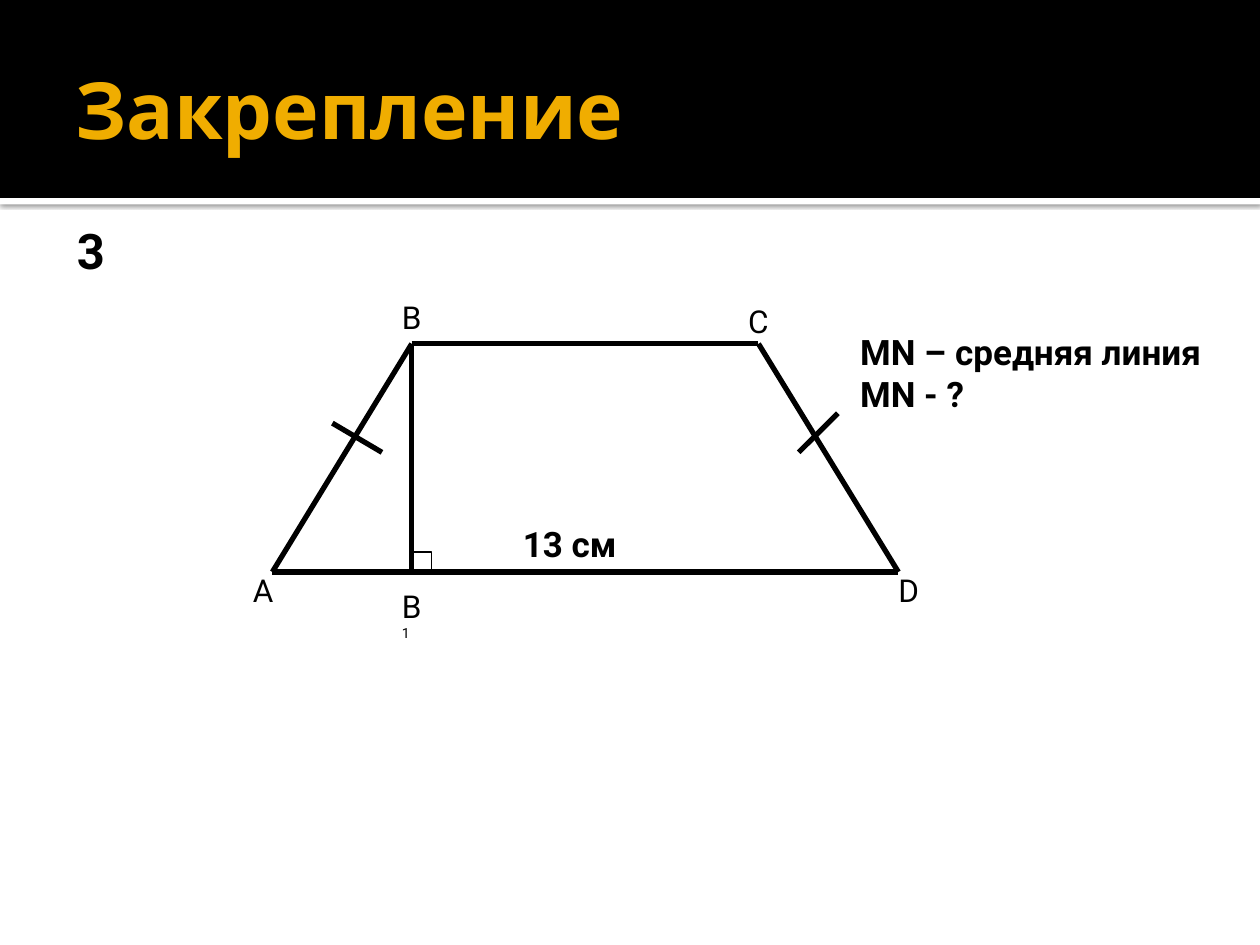
from lxml.etree import SubElement
from pptx import Presentation
from pptx.dml.color import RGBColor
from pptx.enum.shapes import MSO_CONNECTOR, MSO_SHAPE
from pptx.enum.text import MSO_ANCHOR, PP_ALIGN
from pptx.oxml import parse_xml
from pptx.oxml.ns import qn
from pptx.util import Cm, Pt

BLACK = RGBColor(0, 0, 0)
WHITE = RGBColor(255, 255, 255)
GOLD = RGBColor(0xF0, 0xAD, 0x00)
SHADOW = (
    '<a:effectLst xmlns:a="http://schemas.openxmlformats.org/drawingml/2006/main">'
    '<a:outerShdw blurRad="31750" dist="10160" dir="5400000" rotWithShape="0">'
    '<a:srgbClr val="000000"><a:alpha val="60000"/></a:srgbClr>'
    '</a:outerShdw></a:effectLst>'
)

deck = Presentation()
deck.slide_width, deck.slide_height = Cm(25.4), Cm(19.05)
slide = deck.slides.add_slide(deck.slide_layouts[5])
shapes = slide.shapes


def add_box(left, top, width, height, fill=None):
    box = shapes.add_shape(MSO_SHAPE.RECTANGLE, Cm(left), Cm(top), Cm(width), Cm(height))
    box.shadow.inherit = False
    if fill is None:
        box.fill.background()
        box.line.color.rgb = BLACK
        box.line.width = Pt(0.75)
    else:
        box.fill.solid()
        box.fill.fore_color.rgb = fill
        box.line.fill.background()
    return box


def add_label(text, left, top, width, height, size=18, bold=False):
    label = shapes.add_textbox(Cm(left), Cm(top), Cm(width), Cm(height))
    frame = label.text_frame
    frame.word_wrap = True
    frame.text = text
    for para in frame.paragraphs:
        for run in para.runs:
            run.font.name = "Roboto"
            run.font.size = Pt(size)
            run.font.bold = bold
            run.font.color.rgb = BLACK
    return frame


strip = add_box(0, 3.99, 25.4, 0.13, WHITE)
props = strip._element.spPr
props.remove(props.find(qn("a:effectLst")))
props.append(parse_xml(SHADOW))
add_box(0, 0, 25.4, 3.99, BLACK)

title = shapes.title
shapes._spTree.append(title._element)
title.left, title.top, title.width, title.height = Cm(1.27), Cm(0.43), Cm(22.86), Cm(3.48)
frame = title.text_frame
frame.text = "Закрепление"
frame.vertical_anchor = MSO_ANCHOR.MIDDLE
frame.margin_left = Cm(0.25)
frame.margin_right = frame.margin_top = frame.margin_bottom = Cm(0.13)
para = frame.paragraphs[0]
para.alignment = PP_ALIGN.LEFT
font = para.runs[0].font
font.name, font.size, font.bold = "Cabin", Pt(45), True
font.color.rgb = GOLD

A, B, C, D = (5.49, 11.53), (8.3, 6.93), (15.29, 6.93), (18.11, 11.53)
foot = (B[0], A[1])
ticks = [((6.7, 8.53), (7.7, 9.12)), ((16.89, 8.33), (16.1, 9.12))]
for start, end in [(B, C), (A, D), (B, A), (C, D), *ticks, (B, foot)]:
    line = shapes.add_connector(
        MSO_CONNECTOR.STRAIGHT, Cm(start[0]), Cm(start[1]), Cm(end[0]), Cm(end[1])
    )
    line.line.color.rgb = BLACK
    line.line.width = Pt(3)
    SubElement(line._element.spPr, qn("a:effectLst"))

side = 0.4
add_box(foot[0], foot[1] - side, side, side)

for name, left, top in [("A", 4.85, 11.38), ("B", 7.85, 5.89), ("C", 14.83, 5.97), ("D", 17.86, 11.38)]:
    add_label(name, left, top, 0.94, 1.02)

base = add_label("B", 7.85, 11.71, 1, 1.02).paragraphs[0]
index = base.add_run()
index.text = "1"
index.font.name, index.font.size = "Roboto", Pt(8)
index.font.color.rgb = BLACK

add_label("13 см", 10.29, 10.41, 4.01, 1.09, 20, True)
add_label("MN – средняя линия\nMN - ?", 17.09, 6.53, 8.05, 1.96, 20, True)
add_label("3", 1.3, 4.32, 1.8, 1.45, 28, True)

deck.save("out.pptx")
